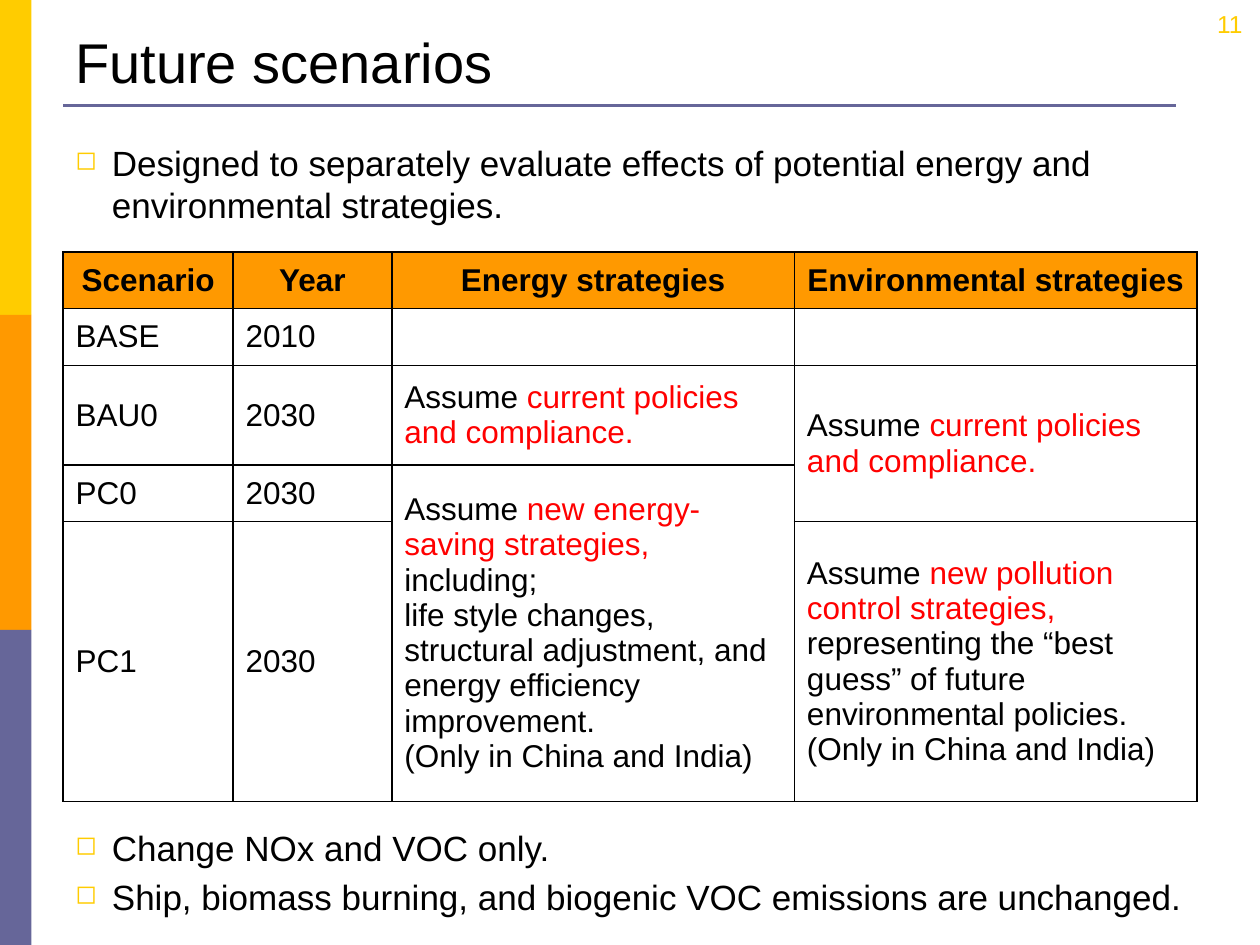
"""Build the slide on future scenarios: a table of strategies between bullets."""
from lxml.etree import SubElement
from pptx import Presentation
from pptx.dml.color import RGBColor
from pptx.enum.shapes import MSO_CONNECTOR, MSO_SHAPE
from pptx.enum.text import MSO_ANCHOR, PP_ALIGN
from pptx.oxml import parse_xml
from pptx.oxml.ns import nsdecls, qn
from pptx.util import Inches, Pt

BLACK = RGBColor(0x00, 0x00, 0x00)
RED = RGBColor(0xFF, 0x00, 0x00)
GOLD = RGBColor(0xFF, 0xCC, 0x00)
ORANGE = RGBColor(0xFF, 0x99, 0x00)
SLATE = RGBColor(0x66, 0x66, 0x99)

TITLE = {"name": "Arial", "size": Pt(32)}
BODY = {"name": "Arial", "size": Pt(20)}
PAGE = {"name": "Arial", "size": Pt(14)}
CELL = {"name": "Arial", "size": Pt(18), "bold": False}
HEAD = {**CELL, "bold": True}

COLS = (1.35, 1.26, 3.195, 3.195)
ROWS = (0.45, 0.45, 0.79, 0.45, 2.22)
POLICY = ["Assume |current policies and compliance."]
SAVING = ["Assume |new energy-saving strategies,| including;",
          "life style changes, structural adjustment, and energy efficiency improvement.",
          "(Only in China and India)"]
CONTROL = ["Assume |new pollution control strategies, |representing the “best guess” "
           "of future environmental policies.", "(Only in China and India)"]
CELLS = (
    (["Scenario"], ["Year"], ["Energy strategies"], ["Environmental strategies"]),
    (["BASE"], ["2010"], [], []),
    (["BAU0"], ["2030"], POLICY, POLICY),
    (["PC0"], ["2030"], SAVING, []),
    (["PC1"], ["2030"], [], CONTROL),
)
SPANS = (((2, 3), (3, 3)), ((3, 2), (4, 2)))


def write(frame, lines, style, color=BLACK, align=PP_ALIGN.LEFT):
    """Write paragraphs in which every second part between bars is red."""
    for i, line in enumerate(lines):
        para = frame.paragraphs[0] if i == 0 else frame.add_paragraph()
        para.alignment = align
        for j, part in enumerate(line.split("|")):
            run = para.add_run()
            run.text = part
            run.font.color.rgb = RED if j % 2 else color
            for key, value in style.items():
                setattr(run.font, key, value)


def add_text(slide, box, lines, style, anchor=MSO_ANCHOR.TOP, **look):
    """Add a wrapped text box and return its frame."""
    frame = slide.shapes.add_textbox(*map(Inches, box)).text_frame
    frame.word_wrap = True
    frame.vertical_anchor = anchor
    write(frame, lines, style, **look)
    return frame


def add_list(slide, box, lines):
    """Add a list with hollow square bullets."""
    for para in add_text(slide, box, lines, BODY).paragraphs:
        para.space_before = Pt(4)
        props = para._p.get_or_add_pPr()
        props.set("marL", str(Inches(0.29)))
        props.set("indent", str(-Inches(0.29)))
        tint = SubElement(props, qn("a:buClr"))
        SubElement(tint, qn("a:srgbClr"), val=str(GOLD))
        SubElement(props, qn("a:buSzPct"), val="75000")
        SubElement(props, qn("a:buChar"), char="◻")


def add_bar(slide, row, color):
    """Add one block of the left side band."""
    box = map(Inches, (0, 2.5 * row, 0.25, 2.5))
    bar = slide.shapes.add_shape(MSO_SHAPE.RECTANGLE, *box)
    bar.shadow.inherit = False
    bar.fill.solid()
    bar.fill.fore_color.rgb = color
    bar.line.fill.background()


def add_rule(slide):
    """Add the line below the title."""
    ends = map(Inches, (0.5, 0.84, 9.33, 0.84))
    rule = slide.shapes.add_connector(MSO_CONNECTOR.STRAIGHT, *ends)
    rule.line.color.rgb = SLATE
    rule.line.width = Pt(1.5)
    SubElement(rule._element.spPr, qn("a:effectLst"))


def set_edges(cell):
    """Draw a thin black border on all four sides of a cell."""
    props = cell._tc.get_or_add_tcPr()
    for i, side in enumerate("LRTB"):
        props.insert(i, parse_xml(
            f'<a:ln{side} {nsdecls("a")} w="{Pt(1)}"><a:solidFill>'
            f'<a:srgbClr val="{BLACK}"/></a:solidFill></a:ln{side}>'))


def add_grid(slide):
    """Add the table of scenarios."""
    box = map(Inches, (0.5, 2, sum(COLS), sum(ROWS)))
    table = slide.shapes.add_table(len(ROWS), len(COLS), *box).table
    for col, width in zip(table.columns, COLS):
        col.width = Inches(width)
    for row, height in zip(table.rows, ROWS):
        row.height = Inches(height)
    for r, line in enumerate(CELLS):
        for c, text in enumerate(line):
            cell = table.cell(r, c)
            cell.vertical_anchor = MSO_ANCHOR.MIDDLE
            if r == 0:
                cell.fill.solid()
                cell.fill.fore_color.rgb = ORANGE
                write(cell.text_frame, text, HEAD, align=PP_ALIGN.CENTER)
            else:
                cell.fill.background()
                write(cell.text_frame, text, CELL)
            set_edges(cell)
    for start, end in SPANS:
        table.cell(*start).merge(table.cell(*end))


def main():
    """Build and save the slide."""
    deck = Presentation()
    deck.slide_width, deck.slide_height = Inches(10), Inches(7.5)
    slide = deck.slides.add_slide(deck.slide_layouts[6])
    for row, color in enumerate((GOLD, ORANGE, SLATE)):
        add_bar(slide, row, color)
    add_rule(slide)
    add_text(slide, (0.5, 0.13, 9, 0.67), ["Future scenarios"], TITLE, MSO_ANCHOR.BOTTOM)
    add_list(slide, (0.5, 1.07, 9, 0.79), [
        "Designed to separately evaluate effects of potential energy and "
        "environmental strategies."])
    add_text(slide, (7.63, 0.02, 2.33, 0.5), ["11"], PAGE, color=GOLD, align=PP_ALIGN.RIGHT)
    add_grid(slide)
    add_list(slide, (0.5, 6.51, 9, 0.87), [
        "Change NOx and VOC only.",
        "Ship, biomass burning, and biogenic VOC emissions are unchanged."])
    deck.save("out.pptx")


if __name__ == "__main__":
    main()
